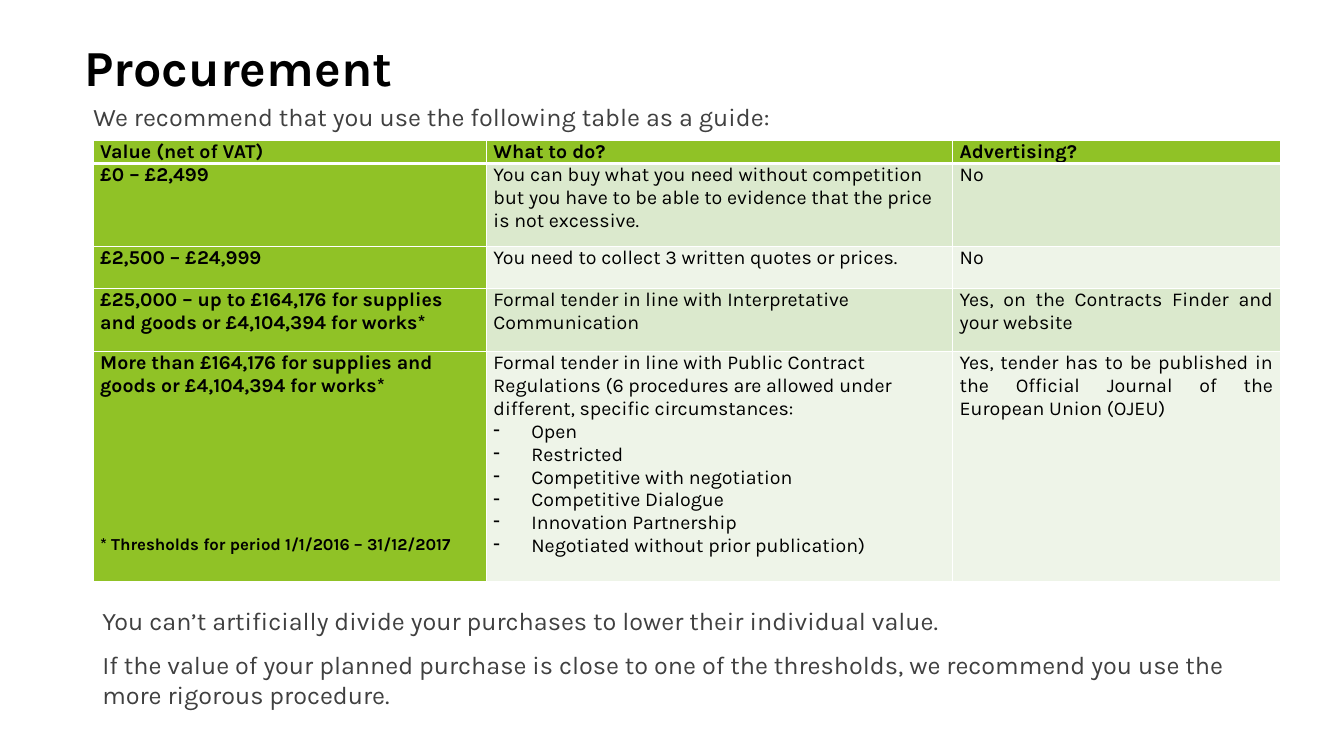
from lxml.etree import SubElement
from pptx import Presentation
from pptx.dml.color import RGBColor
from pptx.enum.text import MSO_ANCHOR, PP_ALIGN
from pptx.oxml.ns import qn
from pptx.util import Pt

FONT = "Karla"
COLORS = {
    "title": "000000",
    "body": "404040",
    "cell": "000000",
    "green": "90C226",
    "band_dark": "DBE9CD",
    "band_light": "EEF4E8",
    "border": "FFFFFF",
}
COLUMN_WIDTHS = [281, 333, 234]
ROW_HEIGHTS = [15, 59.5, 30, 45, 164]
FOOTNOTE = "* Thresholds for period 1/1/2016 – 31/12/2017"
PROCEDURES = [
    "Open",
    "Restricted",
    "Competitive with negotiation",
    "Competitive Dialogue",
    "Innovation Partnership",
    "Negotiated without prior publication)",
]
ROWS = [
    ["Value (net of VAT)", "What to do?", "Advertising?"],
    ["£0 – £2,499",
     "You can buy what you need without competition but you have to be able "
     "to evidence that the price is not excessive.",
     "No"],
    ["£2,500 – £24,999", "You need to collect 3 written quotes or prices.", "No"],
    ["£25,000 – up to £164,176 for supplies and goods or £4,104,394 for works*",
     "Formal tender in line with Interpretative Communication",
     "Yes, on the Contracts Finder and your website"],
    ["More than £164,176 for supplies and goods or £4,104,394 for works*",
     "Formal tender in line with Public Contract Regulations (6 procedures are "
     "allowed under different, specific circumstances:",
     "Yes, tender has to be published in the Official Journal of the European "
     "Union (OJEU)"],
]
ADVICE = [
    "You can’t artificially divide your purchases to lower their individual value.",
    "If the value of your planned purchase is close to one of the thresholds, "
    "we recommend you use the more rigorous procedure.",
]


def add_span(para, text, size, color, bold=False):
    span = para.add_run()
    span.text = text
    span.font.name = FONT
    span.font.size = Pt(size)
    span.font.bold = bold
    span.font.color.rgb = RGBColor.from_string(COLORS[color])


def place(shape, box):
    shape.left, shape.top, shape.width, shape.height = (Pt(v) for v in box)


def set_bullet(para, indent=0, mark=None):
    """Hang a bullet mark in the indent, or remove the inherited bullet."""
    props = para._p.get_or_add_pPr()
    props.set("marL", str(Pt(indent)))
    props.set("indent", str(-Pt(indent)))
    if mark:
        SubElement(props, qn("a:buChar"), char=mark)
    else:
        SubElement(props, qn("a:buNone"))


def set_borders(cell, bottom_width):
    props = cell._tc.get_or_add_tcPr()
    for side in ("lnL", "lnR", "lnT", "lnB"):
        width = bottom_width if side == "lnB" else 1
        line = SubElement(props, qn(f"a:{side}"), w=str(Pt(width)))
        fill = SubElement(line, qn("a:solidFill"))
        SubElement(fill, qn("a:srgbClr"), val=COLORS["border"])


def fill_title(title, box):
    place(title, box)
    frame = title.text_frame
    frame.vertical_anchor = MSO_ANCHOR.MIDDLE
    para = frame.paragraphs[0]
    para.alignment = PP_ALIGN.LEFT
    para.line_spacing = 0.9
    add_span(para, "Procurement", 36, "title", bold=True)


def fill_text(shape, box, texts):
    place(shape, box)
    frame = shape.text_frame
    frame.word_wrap = True
    frame.vertical_anchor = MSO_ANCHOR.TOP
    for index, text in enumerate(texts):
        para = frame.add_paragraph() if index else frame.paragraphs[0]
        para.space_before = Pt(10)
        set_bullet(para)
        add_span(para, text, 18, "body")


def style_cell(cell, row, column):
    cell.margin_left = cell.margin_right = Pt(5)
    cell.margin_top = cell.margin_bottom = 0
    set_borders(cell, 1 if row else 3)
    if row == 0 or column == 0:
        color = "green"
    else:
        color = "band_dark" if row % 2 else "band_light"
    cell.fill.solid()
    cell.fill.fore_color.rgb = RGBColor.from_string(COLORS[color])


def add_threshold_table(page, box):
    frame = page.shapes.add_table(len(ROWS), len(COLUMN_WIDTHS), *(Pt(v) for v in box))
    table = frame.table
    for column, width in zip(table.columns, COLUMN_WIDTHS):
        column.width = Pt(width)
    for row, height in zip(table.rows, ROW_HEIGHTS):
        row.height = Pt(height)
    for row, texts in enumerate(ROWS):
        for column, text in enumerate(texts):
            cell = table.cell(row, column)
            style_cell(cell, row, column)
            para = cell.text_frame.paragraphs[0]
            para.alignment = PP_ALIGN.JUSTIFY if column == 2 else PP_ALIGN.LEFT
            add_span(para, text, 14, "cell", bold=row == 0 or column == 0)

    last_row = len(ROWS) - 1
    footnote = table.cell(last_row, 0).text_frame.add_paragraph()
    footnote.space_before = Pt(98)
    add_span(footnote, FOOTNOTE, 12, "cell", bold=True)
    for procedure in PROCEDURES:
        para = table.cell(last_row, 1).text_frame.add_paragraph()
        set_bullet(para, 27, "-")
        add_span(para, procedure, 14, "cell")


def build_procurement_slide(deck):
    page = deck.slides.add_slide(deck.slide_layouts[1])
    fill_title(page.shapes.title, (53, 18.5, 677, 63))
    fill_text(page.placeholders[1], (59.5, 68.5, 671, 35),
              ["We recommend that you use the following table as a guide:"])
    add_threshold_table(page, (66.5, 100.5, sum(COLUMN_WIDTHS), sum(ROW_HEIGHTS)))
    advice_box = (66, 428.5, 852.5, 79)
    fill_text(page.shapes.add_textbox(0, 0, 0, 0), advice_box, ADVICE)


def main():
    deck = Presentation()
    deck.slide_width, deck.slide_height = Pt(960), Pt(540)
    build_procurement_slide(deck)
    deck.save("out.pptx")


if __name__ == "__main__":
    main()
